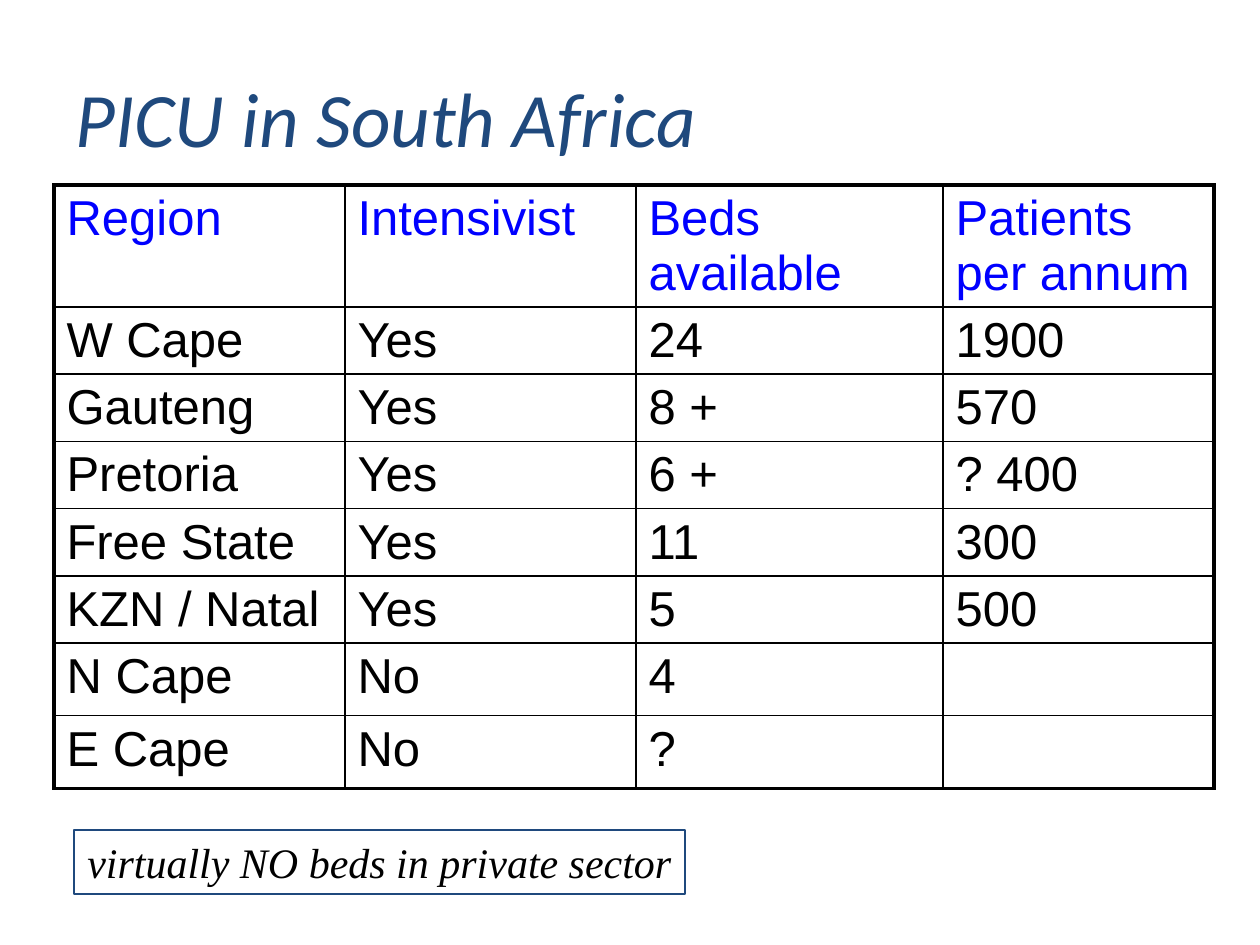
from lxml.etree import SubElement
from pptx import Presentation
from pptx.dml.color import RGBColor
from pptx.enum.shapes import MSO_SHAPE
from pptx.enum.text import MSO_ANCHOR, MSO_AUTO_SIZE, PP_ALIGN
from pptx.oxml.ns import qn
from pptx.util import Emu, Pt

PX = 914400 // 126
INK = {"navy": "1F497D", "blue": "0000FF", "black": "000000"}


def write(para, text, face, size, ink, slant=False):
    run = para.add_run()
    run.text = text
    font = run.font
    font.name, font.size, font.italic = face, Pt(size), slant
    font.color.rgb = RGBColor.from_string(INK[ink])


def edge(cell, side, width):
    line = SubElement(cell._tc.get_or_add_tcPr(), qn("a:ln" + side), w=str(Pt(width)))
    fill = SubElement(line, qn("a:solidFill"))
    SubElement(fill, qn("a:srgbClr"), val=INK["black"])


deck = Presentation()
deck.slide_width, deck.slide_height = Emu(1260 * PX), Emu(945 * PX)
slide = deck.slides.add_slide(deck.slide_layouts[5])

# Title
title = slide.shapes.title
title.left, title.top, title.width, title.height = [Emu(n * PX) for n in (63, 38, 1134, 158)]
title.text_frame.vertical_anchor = MSO_ANCHOR.MIDDLE
para = title.text_frame.paragraphs[0]
para.alignment = PP_ALIGN.LEFT
write(para, "PICU in South Africa", "Calibri", 44, "navy", True)

# Table of regions
rows = [
    ("Region", "Intensivist", "Beds available", "Patients per annum"),
    ("W Cape", "Yes", "24", "1900"),
    ("Gauteng", "Yes", "8 +", "570"),
    ("Pretoria", "Yes", "6 +", "? 400"),
    ("Free State", "Yes", "11", "300"),
    ("KZN / Natal", "Yes", "5", "500"),
    ("N Cape", "No", "4", ""),
    ("E Cape", "No", "?", ""),
]
wide = [291, 291, 307, 271]
high = [121] + [67] * 7
frame = slide.shapes.add_table(len(rows), len(wide), *[
    Emu(n * PX) for n in (54, 185, sum(wide), sum(high))])
table = frame.table
table.first_row = table.horz_banding = False
for col, n in zip(table.columns, wide):
    col.width = Emu(n * PX)
for row, n in zip(table.rows, high):
    row.height = Emu(n * PX)

# Cell text, with a heavier line around the outside
for r, row in enumerate(rows):
    for c, text in enumerate(row):
        cell = table.cell(r, c)
        outer = {"L": c == 0, "R": c == len(wide) - 1, "T": r == 0, "B": r == len(rows) - 1}
        for side, heavy in outer.items():
            edge(cell, side, 2.25 if heavy else 1)
        cell.fill.background()
        para = cell.text_frame.paragraphs[0]
        if text:
            write(para, text, "Arial", 28, "black" if r else "blue")
        else:
            para.font.size = Pt(28)

# Note below the table
note = slide.shapes.add_shape(MSO_SHAPE.RECTANGLE, *[Emu(n * PX) for n in (74, 830, 611, 64)])
note.shadow.inherit = False
note.fill.background()
note.line.color.rgb = RGBColor.from_string(INK["navy"])
note.line.width = Pt(0.75)
body = note.text_frame
body.word_wrap = False
body.auto_size = MSO_AUTO_SIZE.SHAPE_TO_FIT_TEXT
para = body.paragraphs[0]
para.alignment = PP_ALIGN.CENTER
write(para, "virtually NO beds in private sector", "Times New Roman", 24, "black", True)

deck.save("out.pptx")
